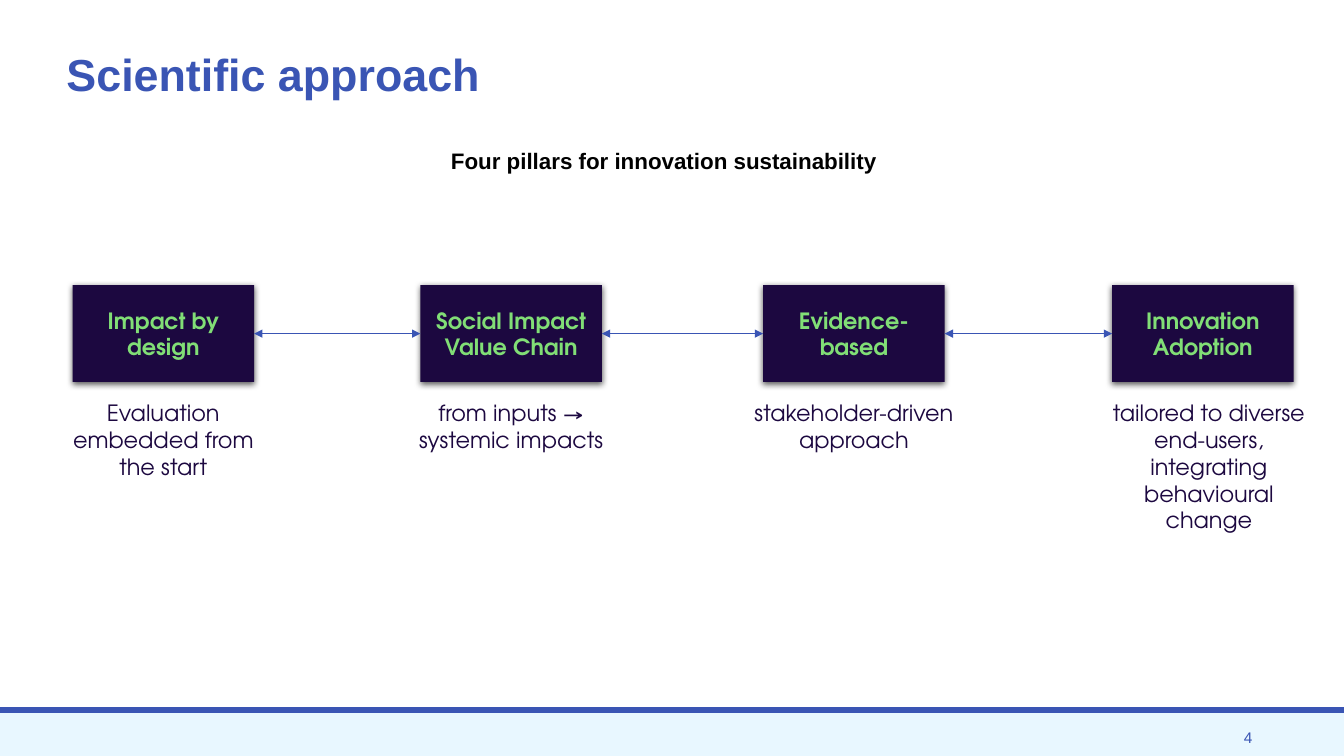
from pptx import Presentation
from pptx.dml.color import RGBColor
from pptx.enum.shapes import MSO_CONNECTOR as CONN, MSO_SHAPE as SHAPE
from pptx.enum.text import MSO_ANCHOR as ANCHOR, MSO_AUTO_SIZE as AUTO, PP_ALIGN as ALIGN
from pptx.oxml import parse_xml
from pptx.oxml.ns import nsdecls
from pptx.util import Inches, Pt

COLORS = {"blue": "3A55B4", "pale": "E8F7FF", "navy": "1C0840",
          "green": "81DE76", "black": "000000"}
SANS, GEOMETRIC = "Arial", "TeX Gyre Adventor"

BOX_TOP, BOX_W, BOX_H = 2.83, 1.8, 0.96
CAPTION_TOP, CAPTION_W = 3.91, 2.18

# Box left, caption left, heading, caption, caption height
PILLARS = [
    (0.72, 0.53, "Impact by design", "Evaluation embedded from the start", 0.91),
    (4.17, 3.98, "Social Impact Value Chain", "from inputs → systemic impacts", 0.64),
    (7.57, 7.38, "Evidence-based", "stakeholder-driven approach", 0.64),
    (11.03, 10.9, "Innovation Adoption",
     "tailored to diverse end-users, integrating behavioural change", 1.45),
]


def rgb(name):
    return RGBColor.from_string(COLORS[name])


def write(tf, text, size, font, color, bold=False, align=ALIGN.LEFT):
    tf.word_wrap = True
    p = tf.paragraphs[0]
    p.alignment = align
    r = p.add_run()
    r.text = text
    r.font.size, r.font.name, r.font.bold = Pt(size), font, bold
    r.font.color.rgb = rgb(color)
    return p


def add_text(s, x, y, w, h, inset=True):
    tf = s.shapes.add_textbox(Inches(x), Inches(y), Inches(w), Inches(h)).text_frame
    if not inset:
        tf.margin_left = tf.margin_top = tf.margin_right = tf.margin_bottom = 0
    return tf


def add_rect(s, x, y, w, h, fill):
    sp = s.shapes.add_shape(SHAPE.RECTANGLE, Inches(x), Inches(y), Inches(w), Inches(h))
    sp.shadow.inherit = False
    sp.fill.solid()
    sp.fill.fore_color.rgb = rgb(fill)
    sp.line.fill.background()
    return sp


def add_pillar(s, x, caption_x, heading, caption, caption_h):
    sp = add_rect(s, x, BOX_TOP, BOX_W, BOX_H, "navy")
    sp.shadow._element.effectLst.append(parse_xml(
        f'<a:outerShdw {nsdecls("a")} blurRad="{Pt(4.5)}" dist="{Pt(1.5)}" '
        f'dir="5400000" rotWithShape="0"><a:srgbClr val="{COLORS["black"]}">'
        '<a:alpha val="63000"/></a:srgbClr></a:outerShdw>'))
    sp.text_frame.vertical_anchor = ANCHOR.MIDDLE
    write(sp.text_frame, heading, 16, GEOMETRIC, "green", True, ALIGN.CENTER)

    tf = add_text(s, caption_x, CAPTION_TOP, CAPTION_W, caption_h)
    write(tf, caption, 16, GEOMETRIC, "navy", align=ALIGN.CENTER)
    tf.auto_size = AUTO.SHAPE_TO_FIT_TEXT
    return sp


def add_link(s, left_box, right_box):
    link = s.shapes.add_connector(CONN.STRAIGHT, 0, 0, 0, 0)
    link.begin_connect(left_box, 3)
    link.end_connect(right_box, 1)
    link.line.color.rgb = rgb("blue")
    link.line.width = Pt(0.5)
    ln = link.line._get_or_add_ln()
    for end in ("headEnd", "tailEnd"):
        ln.append(parse_xml(f'<a:{end} {nsdecls("a")} type="triangle"/>'))
    link._element.spPr.append(parse_xml(f'<a:effectLst {nsdecls("a")}/>'))


def add_footer(s):
    add_rect(s, 0, 7.06, 13.33, 0.45, "pale")
    rule = add_rect(s, 0, 7.02, 13.33, 0.05, "blue")
    rule.line.color.rgb = rgb("blue")
    rule.line.width = Pt(1)
    tf = add_text(s, 9.68, 7.17, 2.84, 0.3)
    tf.vertical_anchor = ANCHOR.MIDDLE
    write(tf, "4", 11, SANS, "blue", align=ALIGN.RIGHT)


def main():
    prs = Presentation()
    prs.slide_width, prs.slide_height = Inches(13.33), Inches(7.5)
    s = prs.slides.add_slide(prs.slide_layouts[6])

    add_footer(s)

    # Title and subtitle
    title = add_text(s, 0.66, 0.52, 11.84, 0.53, inset=False)
    write(title, "Scientific approach", 32, SANS, "blue", True).line_spacing = 0.9
    subtitle = add_text(s, 0.17, 1.46, 12.83, 5.13, inset=False)
    write(subtitle, "Four pillars for innovation sustainability",
          16, SANS, "black", True, ALIGN.CENTER)

    # Pillars joined by two-way arrows
    boxes = [add_pillar(s, *pillar) for pillar in PILLARS]
    for left_box, right_box in zip(boxes, boxes[1:]):
        add_link(s, left_box, right_box)

    prs.save("out.pptx")


if __name__ == "__main__":
    main()
